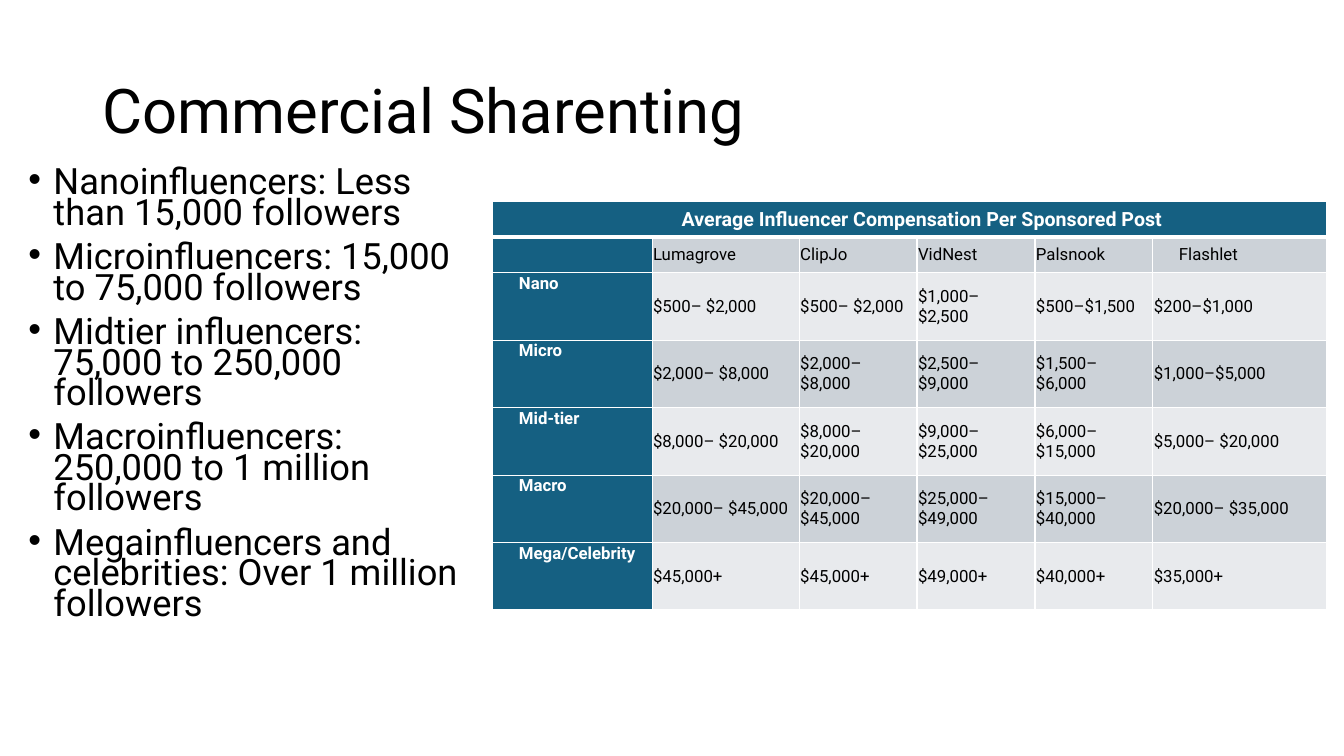
import pptx
import pptx.dml.color
import pptx.enum.text
import pptx.oxml.ns
import pptx.util
from lxml import etree

Pt = pptx.util.Pt
RGBColor = pptx.dml.color.RGBColor
ALIGN = pptx.enum.text.PP_ALIGN
ANCHOR = pptx.enum.text.MSO_ANCHOR
qn = pptx.oxml.ns.qn

TITLE = "Commercial Sharenting"
TIERS = [
    "Nanoinfluencers: Less than 15,000 followers",
    "Microinfluencers: 15,000 to 75,000 followers",
    "Midtier influencers: 75,000 to 250,000 followers",
    "Macroinfluencers: 250,000 to 1 million followers",
    "Megainfluencers and celebrities: Over 1 million followers",
]
TABLE_TITLE = "Average Influencer Compensation Per Sponsored Post"
TABLE_ROWS = [
    ["", "Lumagrove", "ClipJo", "VidNest", "Palsnook", "Flashlet"],
    ["Nano", "$500– $2,000", "$500– $2,000", "$1,000– $2,500", "$500–$1,500", "$200–$1,000"],
    ["Micro", "$2,000– $8,000", "$2,000– $8,000", "$2,500– $9,000", "$1,500– $6,000", "$1,000–$5,000"],
    ["Mid-tier", "$8,000– $20,000", "$8,000– $20,000", "$9,000– $25,000", "$6,000– $15,000", "$5,000– $20,000"],
    ["Macro", "$20,000– $45,000", "$20,000– $45,000", "$25,000– $49,000", "$15,000– $40,000", "$20,000– $35,000"],
    ["Mega/Celebrity", "$45,000+", "$45,000+", "$49,000+", "$40,000+", "$35,000+"],
]
COLUMN_WIDTHS = [113.8, 105.1, 84.2, 84.2, 84.2, 123.8]
ROW_HEIGHTS = [25.4] * 2 + [48.2] * 5

FONT = "Roboto"
BLACK = RGBColor(0x00, 0x00, 0x00)
WHITE = RGBColor(0xFF, 0xFF, 0xFF)
TEAL = RGBColor(0x15, 0x60, 0x82)
DARK_BAND = RGBColor(0xCC, 0xD2, 0xD8)
LIGHT_BAND = RGBColor(0xE8, 0xEA, 0xED)
INDENT = 18


def place(shape, left, top, width, height):
    shape.left, shape.top = Pt(left), Pt(top)
    shape.width, shape.height = Pt(width), Pt(height)


def write(paragraph, text, size, color=BLACK, bold=False):
    run = paragraph.add_run()
    run.text = text
    run.font.name, run.font.size, run.font.bold = FONT, Pt(size), bold
    run.font.color.rgb = color


def set_indent(paragraph, left, first_line):
    properties = paragraph._p.get_or_add_pPr()
    properties.set("marL", str(Pt(left)))
    properties.set("indent", str(Pt(first_line)))
    return properties


def add_borders(cell, bottom_width):
    properties = cell._tc.get_or_add_tcPr()
    for side, width in (("L", 1), ("R", 1), ("T", 1), ("B", bottom_width)):
        line = etree.SubElement(properties, qn(f"a:ln{side}"), w=str(Pt(width)))
        fill = etree.SubElement(line, qn("a:solidFill"))
        etree.SubElement(fill, qn("a:srgbClr"), val=str(WHITE))


def format_cell(cell, fill, anchor=ANCHOR.MIDDLE, bottom_width=1):
    add_borders(cell, bottom_width)
    cell.fill.solid()
    cell.fill.fore_color.rgb = fill
    cell.vertical_anchor = anchor
    cell.margin_left = cell.margin_right = Pt(0.72)
    cell.margin_top = cell.margin_bottom = Pt(0.72)


def fill_title(title):
    place(title, 66, 28.8, 828, 104.4)
    title.text_frame.vertical_anchor = ANCHOR.MIDDLE
    paragraph = title.text_frame.paragraphs[0]
    paragraph.alignment = ALIGN.LEFT
    paragraph.line_spacing = 0.9
    write(paragraph, TITLE, 44)


def fill_tiers(body):
    place(body, 13, 118, 331, 343)
    frame = body.text_frame
    frame.auto_size = pptx.enum.text.MSO_AUTO_SIZE.NONE
    for index, tier in enumerate(TIERS):
        paragraph = frame.add_paragraph() if index else frame.paragraphs[0]
        paragraph.line_spacing = 0.7
        paragraph.space_before = Pt(10)
        properties = set_indent(paragraph, INDENT, -INDENT)
        etree.SubElement(properties, qn("a:buFont"), typeface="Arial")
        etree.SubElement(properties, qn("a:buChar"), char="•")
        write(paragraph, tier, 25.9)


def add_compensation_table(slide):
    table = slide.shapes.add_table(
        len(ROW_HEIGHTS), len(COLUMN_WIDTHS), Pt(352), Pt(144),
        Pt(sum(COLUMN_WIDTHS)), Pt(sum(ROW_HEIGHTS))).table
    for column, width in zip(table.columns, COLUMN_WIDTHS):
        column.width = Pt(width)
    for row, height in zip(table.rows, ROW_HEIGHTS):
        row.height = Pt(height)

    last_column = len(COLUMN_WIDTHS) - 1
    for column in range(last_column + 1):
        format_cell(table.cell(0, column), TEAL, bottom_width=3)
    heading = table.cell(0, 0)
    heading.merge(table.cell(0, last_column))
    paragraph = heading.text_frame.paragraphs[0]
    paragraph.alignment = ALIGN.CENTER
    set_indent(paragraph, 0, INDENT)
    write(paragraph, TABLE_TITLE, 14, WHITE, True)

    for row, texts in enumerate(TABLE_ROWS, start=1):
        band = DARK_BAND if row % 2 else LIGHT_BAND
        for column, text in enumerate(texts):
            cell = table.cell(row, column)
            is_label = column == 0
            format_cell(cell, TEAL if is_label else band,
                        ANCHOR.TOP if is_label else ANCHOR.MIDDLE)
            if not text:
                continue
            paragraph = cell.text_frame.paragraphs[0]
            paragraph.alignment = ALIGN.JUSTIFY
            if is_label or (row == 1 and column == last_column):
                set_indent(paragraph, 0, INDENT)
            write(paragraph, text, 12, WHITE if is_label else BLACK, is_label)


def main():
    presentation = pptx.Presentation()
    presentation.slide_width, presentation.slide_height = Pt(960), Pt(540)
    slide = presentation.slides.add_slide(presentation.slide_layouts[1])
    fill_title(slide.shapes.title)
    fill_tiers(slide.placeholders[1])
    add_compensation_table(slide)
    presentation.save("out.pptx")


if __name__ == "__main__":
    main()
